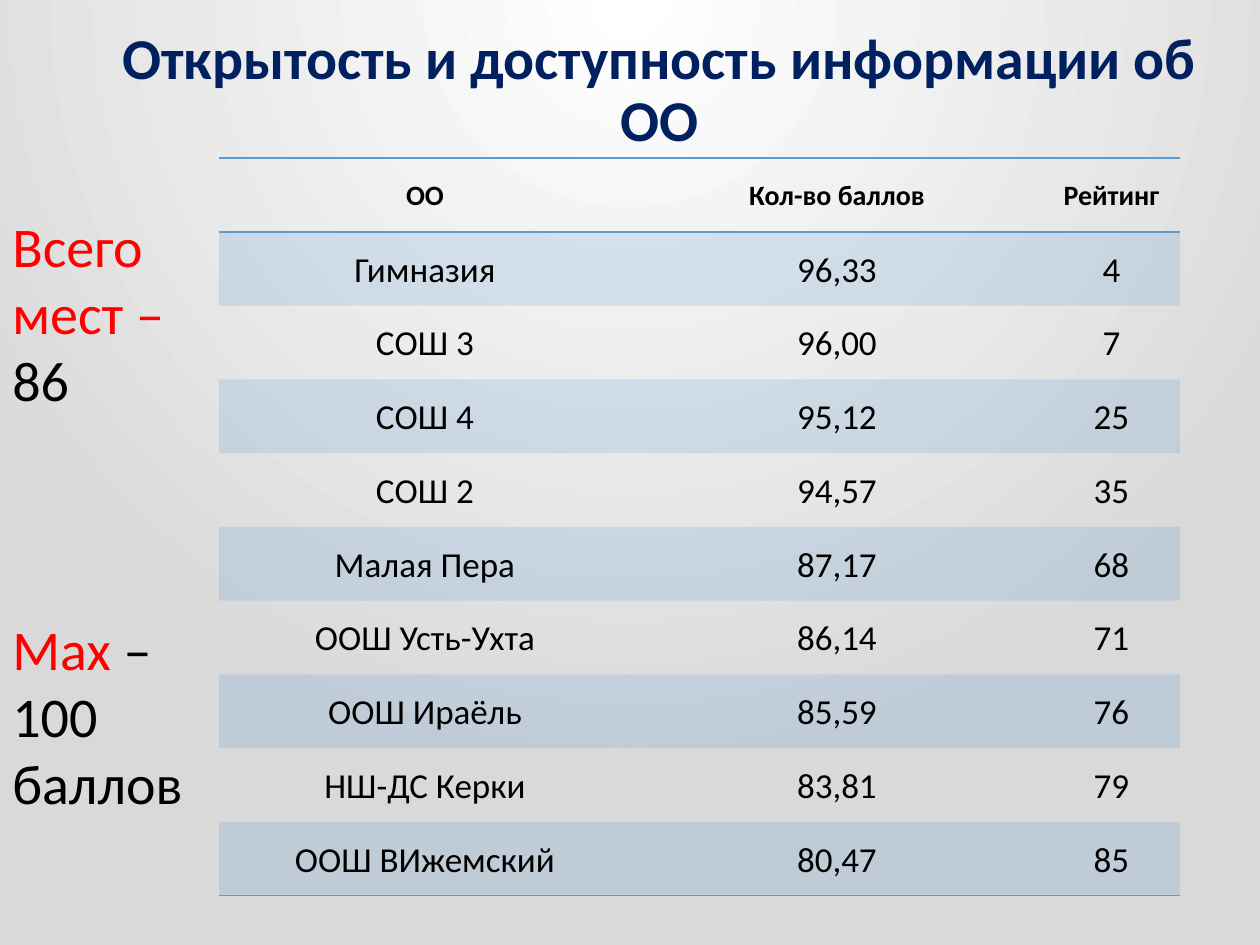
from pptx import Presentation
from pptx.dml.color import RGBColor
from pptx.enum.text import MSO_ANCHOR, PP_ALIGN
from pptx.oxml import parse_xml
from pptx.oxml.ns import nsdecls
from pptx.util import Emu, Pt

SCALE = 914400 / 126
HUES = {"navy": "002060", "red": "FF0000", "black": "000000",
        "blue": "5B9BD5", "white": "FFFFFF", "gray": "D9D9D9"}
PLAIN = "{2D5ABB26-0587-4C30-8999-92F81FD0307C}"
ROWS = [
    ("ОО", "Кол-во баллов", "Рейтинг"),
    ("Гимназия", "96,33", "4"),
    ("СОШ 3", "96,00", "7"),
    ("СОШ 4", "95,12", "25"),
    ("СОШ 2", "94,57", "35"),
    ("Малая Пера", "87,17", "68"),
    ("ООШ Усть-Ухта", "86,14", "71"),
    ("ООШ Ираёль", "85,59", "76"),
    ("НШ-ДС Керки", "83,81", "79"),
    ("ООШ ВИжемский", "80,47", "85"),
]
NOTES = [
    ([("Всего мест –", "red")], 0),
    ([("86", "black")], 0),
    ([("Max ", "red"), ("–", "black")], 115),
    ([("100 баллов", "black")], 0),
]


def px(num):
    """Turn pixels into EMU."""
    return Emu(round(num * SCALE))


def apply(item, **vals):
    """Set each given attribute on an item."""
    for name, val in vals.items():
        setattr(item, name, val)


def write(para, text, hue, size, bold=False):
    """Add one styled run to a paragraph."""
    run = para.add_run()
    apply(run, text=text)
    apply(run.font, name="Calibri", size=Pt(size), bold=bold)
    run.font.color.rgb = RGBColor.from_string(HUES[hue])


def frame(slide, box, anchor):
    """Add a wrapping text box and return its frame."""
    body = slide.shapes.add_textbox(*map(px, box)).text_frame
    apply(body, word_wrap=True, vertical_anchor=anchor)
    return body


def paint(slide):
    """Fill the background with a radial gradient."""
    fill = slide.background.fill
    fill.gradient()
    old = slide.element.xpath(".//a:gradFill")[0]
    stops = "".join(
        f'<a:gs pos="{pos}"><a:srgbClr val="{HUES[hue]}"/></a:gs>'
        for pos, hue in ((0, "white"), (100000, "gray")))
    new = parse_xml(
        f'<a:gradFill {nsdecls("a")} rotWithShape="1"><a:gsLst>{stops}</a:gsLst>'
        '<a:path path="circle"><a:fillToRect l="50000" t="-80000" r="50000" '
        'b="180000"/></a:path></a:gradFill>')
    old.getparent().replace(old, new)


def title(slide, box):
    """Place the heading in its box."""
    para = frame(slide, box, MSO_ANCHOR.MIDDLE).paragraphs[0]
    apply(para, alignment=PP_ALIGN.CENTER, line_spacing=0.9)
    write(para, "Открытость и доступность информации об ОО", "navy", 33, True)


def notes(slide, box):
    """Place the side notes in their box."""
    body = frame(slide, box, MSO_ANCHOR.TOP)
    for i, (runs, gap) in enumerate(NOTES):
        para = body.add_paragraph() if i else body.paragraphs[0]
        if gap:
            para.space_before = Pt(gap)
        for text, hue in runs:
            write(para, text, hue, 32)


def edge(cell, side):
    """Draw a thin blue line on one side of a cell."""
    cell._tc.get_or_add_tcPr().append(parse_xml(
        f'<a:ln{side} {nsdecls("a")} w="12700"><a:solidFill>'
        f'<a:srgbClr val="{HUES["blue"]}"/></a:solidFill></a:ln{side}>'))


def tint(cell):
    """Fill a cell with see-through blue."""
    cell.fill.solid()
    cell.fill.fore_color.rgb = RGBColor.from_string(HUES["blue"])
    color = cell._tc.tcPr.xpath("./a:solidFill/a:srgbClr")[0]
    color.append(parse_xml(f'<a:alpha {nsdecls("a")} val="20000"/>'))


def scores(slide, box):
    """Place the table of scores in its box."""
    wide, high = box[2:]
    last = len(ROWS) - 1
    grid = slide.shapes.add_table(len(ROWS), 3, *map(px, box)).table
    apply(grid, first_row=False, horz_banding=False)
    grid._tbl.tblPr.xpath("./a:tableStyleId")[0].text = PLAIN
    for col, part in zip(grid.columns, (3, 3, 1)):
        col.width = px(wide * part // 7)
    for r, texts in enumerate(ROWS):
        grid.rows[r].height = px(high / len(ROWS))
        for c, text in enumerate(texts):
            cell = grid.cell(r, c)
            pad = px(5 if c == 0 or (r == 0 and c == 2) else 9)
            apply(cell, margin_left=pad, margin_right=pad, margin_top=0,
                  margin_bottom=0, vertical_anchor=MSO_ANCHOR.MIDDLE)
            para = cell.text_frame.paragraphs[0]
            apply(para, alignment=PP_ALIGN.CENTER, line_spacing=1.07)
            write(para, text, "black", 20 if r else 16, r == 0)
            if r == 0:
                edge(cell, "T")
            if r in (0, last):
                edge(cell, "B")
            if r % 2:
                tint(cell)


def main():
    """Build the slide and save it."""
    deck = Presentation()
    apply(deck, slide_width=px(1260), slide_height=px(945))
    slide = deck.slides.add_slide(deck.slide_layouts[6])
    paint(slide)
    title(slide, (77, 0, 1165, 183))
    scores(slide, (219, 158, 962, 738))
    notes(slide, (0, 205, 263, 624))
    deck.save("out.pptx")


if __name__ == "__main__":
    main()
